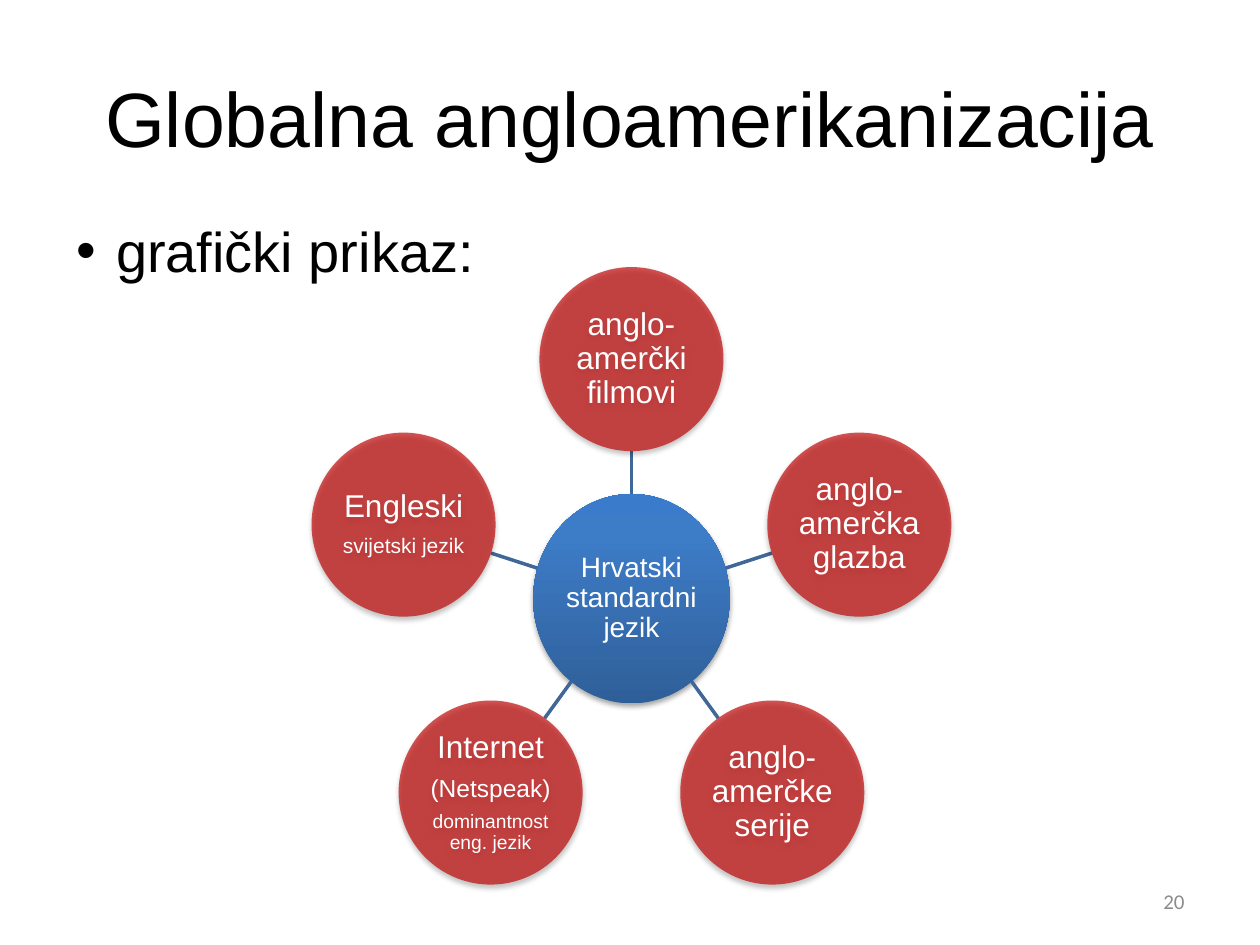
from math import cos, hypot, radians, sin

from pptx import Presentation
from pptx.dml.color import RGBColor
from pptx.enum.shapes import MSO_CONNECTOR as Connector, MSO_SHAPE as Shape
from pptx.enum.text import MSO_ANCHOR as Anchor, PP_ALIGN as Align
from pptx.oxml import parse_xml
from pptx.oxml.ns import nsdecls, qn
from pptx.util import Cm, Pt

BLACK = RGBColor(0x00, 0x00, 0x00)
WHITE = RGBColor(0xFF, 0xFF, 0xFF)
GREY = RGBColor(0x8C, 0x8C, 0x8C)
RED = RGBColor(0xC0, 0x00, 0x00)
LINE_BLUE = RGBColor(0x3F, 0x67, 0x97)
HUB_STOPS = [
    (0, RGBColor(0x2F, 0x5F, 0x99)),
    (80, RGBColor(0x3D, 0x7C, 0xC7)),
    (100, RGBColor(0x3A, 0x7C, 0xCB)),
]

CENTER_X, CENTER_Y = 12.73, 12.07
HUB_WIDTH, HUB_HEIGHT = 3.96, 4.22
CIRCLE = 3.71
ORBIT = 4.83

presentation = Presentation()
presentation.slide_width, presentation.slide_height = Cm(25.4), Cm(19.05)
slide = presentation.slides.add_slide(presentation.slide_layouts[6])
shapes = slide.shapes


def add_text(paragraph, text, size, color, align, font="Arial"):
    paragraph.alignment = align
    run = paragraph.add_run()
    run.text = text
    run.font.name, run.font.size = font, Pt(size)
    run.font.color.rgb = color


def add_circle(x, y, width, height, lines):
    shape = shapes.add_shape(
        Shape.OVAL, Cm(x - width / 2), Cm(y - height / 2), Cm(width), Cm(height))
    shape.line.fill.background()
    # Soft shadow straight below
    shape.shadow.inherit = False
    shape._element.spPr.find(qn("a:effectLst")).append(parse_xml(
        f'<a:outerShdw {nsdecls("a")} blurRad="{Pt(3.1)}" dist="{Pt(1.8)}" '
        'dir="5400000" rotWithShape="0"><a:srgbClr val="000000">'
        '<a:alpha val="35000"/></a:srgbClr></a:outerShdw>'))
    # Centred lines of text
    frame = shape.text_frame
    frame.word_wrap = True
    frame.vertical_anchor = Anchor.MIDDLE
    frame.margin_left = frame.margin_right = Cm(0.03)
    frame.margin_top = frame.margin_bottom = Cm(0.03)
    for index, (text, size) in enumerate(lines):
        paragraph = frame.add_paragraph() if index else frame.paragraphs[0]
        paragraph.line_spacing = 0.9
        paragraph.space_after = Pt(round(0.35 * size, 1))
        add_text(paragraph, text, size, WHITE, Align.CENTER)
    return shape


# Title, bullet and slide number
for text, box, size, color, align, font in [
    ("Globalna angloamerikanizacija", (1.27, 0.76, 22.86, 3.18), 44, BLACK, Align.CENTER, "Arial"),
    ("grafički prikaz:", (1.3, 4.22, 8.99, 1.63), 32, BLACK, Align.LEFT, "Arial"),
    ("20", (18.21, 17.65, 5.92, 1.02), 12, GREY, Align.RIGHT, "Calibri"),
]:
    frame = shapes.add_textbox(*map(Cm, box)).text_frame
    frame.word_wrap = True
    frame.vertical_anchor = Anchor.MIDDLE
    paragraph = frame.paragraphs[0]
    add_text(paragraph, text, size, color, align, font)
    if align == Align.LEFT:
        properties = paragraph._p.get_or_add_pPr()
        properties.set("marL", str(Cm(0.79)))
        properties.set("indent", str(-Cm(0.79)))
        properties.append(parse_xml(f'<a:buFont {nsdecls("a")} typeface="Arial"/>'))
        properties.append(parse_xml(f'<a:buChar {nsdecls("a")} char="•"/>'))

# Hub with a vertical gradient
hub = add_circle(CENTER_X, CENTER_Y, HUB_WIDTH, HUB_HEIGHT,
                 [("Hrvatski standardni jezik", 16)])
hub.fill.gradient()
hub.fill.gradient_angle = 90
stop_list = hub._element.spPr.find(qn("a:gradFill")).find(qn("a:gsLst"))
for stop in list(stop_list):
    stop_list.remove(stop)
for position, color in HUB_STOPS:
    stop_list.append(parse_xml(
        f'<a:gs {nsdecls("a")} pos="{position * 1000}"><a:srgbClr val="{color}"/></a:gs>'))

# Influences, clockwise from the top, each joined to the hub
influences = [
    [("anglo-amerčki filmovi", 18)],
    [("anglo-amerčka glazba", 18)],
    [("anglo-amerčke serije", 18)],
    [("Internet", 18), ("(Netspeak)", 14), ("dominantnost eng. jezik", 11)],
    [("Engleski", 18), ("svijetski jezik", 12)],
]
for index, lines in enumerate(influences):
    angle = radians(index * 360 / len(influences))
    across, down = sin(angle), -cos(angle)

    hub_edge = 1 / hypot(across / (HUB_WIDTH / 2), down / (HUB_HEIGHT / 2))
    circle_edge = ORBIT - CIRCLE / 2
    connector = shapes.add_connector(
        Connector.STRAIGHT,
        Cm(CENTER_X + hub_edge * across), Cm(CENTER_Y + hub_edge * down),
        Cm(CENTER_X + circle_edge * across), Cm(CENTER_Y + circle_edge * down))
    connector.line.color.rgb = LINE_BLUE
    connector.line.width = Pt(2)
    connector._element.spPr.append(parse_xml(f'<a:effectLst {nsdecls("a")}/>'))

    circle = add_circle(CENTER_X + ORBIT * across, CENTER_Y + ORBIT * down,
                        CIRCLE, CIRCLE, lines)
    circle.fill.solid()
    circle.fill.fore_color.rgb = RED
    circle._element.spPr.find(qn("a:solidFill")).find(qn("a:srgbClr")).append(
        parse_xml(f'<a:alpha {nsdecls("a")} val="67000"/>'))

presentation.save("out.pptx")
